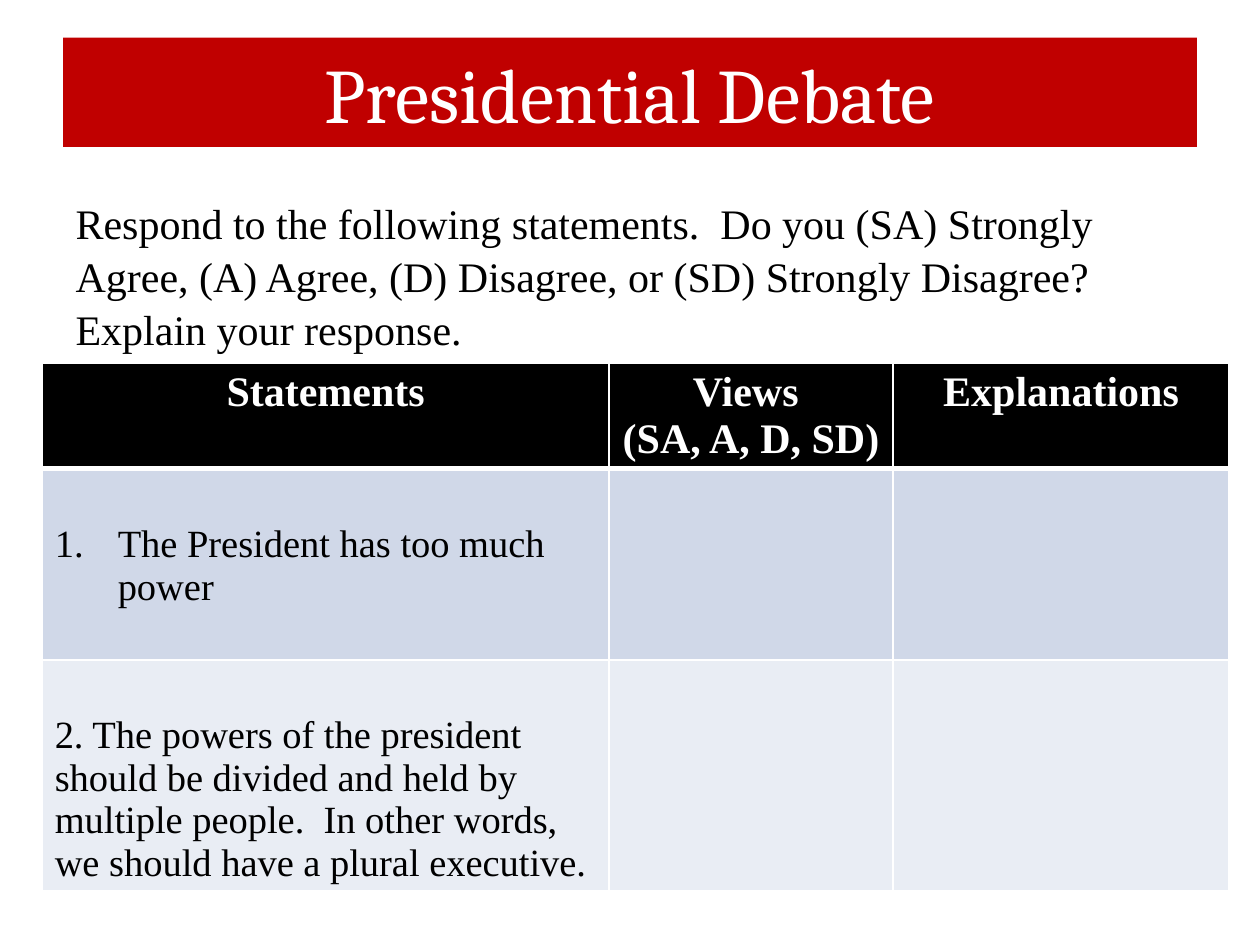
from dataclasses import dataclass

import lxml.etree
import pptx
import pptx.dml.color
import pptx.enum.text
import pptx.oxml.ns
import pptx.util

Cm = pptx.util.Cm
Pt = pptx.util.Pt
ALIGN = pptx.enum.text.PP_ALIGN
ANCHOR = pptx.enum.text.MSO_ANCHOR
WHITE = "FFFFFF"
BLACK = "000000"
SERIF = "Times New Roman"


@dataclass
class TextStyle:
    size: float
    color: str
    name: str = SERIF
    bold: bool = False
    align: int = ALIGN.LEFT


@dataclass
class TableRow:
    height: float
    fill: str
    texts: tuple
    style: TextStyle
    top_margin: float = 0.13
    top_line: float = 1
    bottom_line: float = 1
    numbered: bool = False


def rgb(value: str):
    return pptx.dml.color.RGBColor.from_string(value)


def add_child(parent, tag: str, **attributes: str):
    child = lxml.etree.SubElement(parent, pptx.oxml.ns.qn(tag))
    for key, value in attributes.items():
        child.set(key, value)
    return child


def paint(target, color: str) -> None:
    target.fill.solid()
    target.fill.fore_color.rgb = rgb(color)


def format_paragraph(para, style: TextStyle) -> None:
    para.alignment = style.align
    para.space_before = Pt(0)
    para.font.name = style.name
    para.font.size = Pt(style.size)
    para.font.bold = style.bold
    para.font.color.rgb = rgb(style.color)


def set_indent(para, left: float, bullet: str, **attributes: str) -> None:
    properties = para._p.get_or_add_pPr()
    properties.set("marL", str(Cm(left)))
    properties.set("indent", str(-Cm(left)))
    add_child(properties, bullet, **attributes)


def draw_borders(cell, row: TableRow) -> None:
    properties = cell._tc.get_or_add_tcPr()
    widths = {"a:lnL": 1, "a:lnR": 1, "a:lnT": row.top_line, "a:lnB": row.bottom_line}
    for tag, width in widths.items():
        line = add_child(properties, tag, w=str(Pt(width)))
        add_child(add_child(line, "a:solidFill"), "a:srgbClr", val=WHITE)


def fill_placeholder(holder, box: tuple, text: str, color: str, style: TextStyle):
    holder.left, holder.top, holder.width, holder.height = map(Cm, box)
    paint(holder, color)
    frame = holder.text_frame
    frame.auto_size = pptx.enum.text.MSO_AUTO_SIZE.NONE
    frame.text = text
    return frame.paragraphs[0]


def draw_table(page, left: float, top: float, widths: tuple, rows: list) -> None:
    height = sum(row.height for row in rows)
    table = page.shapes.add_table(
        len(rows), len(widths), Cm(left), Cm(top), Cm(sum(widths)), Cm(height)
    ).table
    for column, width in zip(table.columns, widths):
        column.width = Cm(width)
    for index, row in enumerate(rows):
        table.rows[index].height = Cm(row.height)
        for cell, text in zip(table.rows[index].cells, row.texts):
            draw_borders(cell, row)
            paint(cell, row.fill)
            cell.margin_top = Cm(row.top_margin)
            cell.text = text
            for para in cell.text_frame.paragraphs:
                if row.numbered and text:
                    set_indent(para, 1.27, "a:buFont", typeface="+mj-lt")
                    add_child(para._p.pPr, "a:buAutoNum", type="arabicPeriod")
                format_paragraph(para, row.style)


def main() -> None:
    deck = pptx.Presentation()
    deck.slide_width, deck.slide_height = Cm(25.4), Cm(19.05)
    page = deck.slides.add_slide(deck.slide_layouts[1])

    title_style = TextStyle(44, WHITE, "Cambria", align=ALIGN.CENTER)
    title = fill_placeholder(
        page.shapes.title, (1.27, 0.76, 22.86, 2.2), "Presidential Debate", "C00000", title_style
    )
    page.shapes.title.text_frame.vertical_anchor = ANCHOR.MIDDLE
    format_paragraph(title, title_style)

    prompt_style = TextStyle(24, BLACK)
    prompt = fill_placeholder(
        page.placeholders[1],
        (1.27, 3.81, 22.86, 13.21),
        "Respond to the following statements.  Do you (SA) Strongly Agree, (A) Agree, "
        "(D) Disagree, or (SD) Strongly Disagree?  Explain your response.",
        WHITE,
        prompt_style,
    )
    set_indent(prompt, 0, "a:buNone")
    prompt.line_spacing = 1.05
    format_paragraph(prompt, prompt_style)

    header_style = TextStyle(24, WHITE, bold=True, align=ALIGN.CENTER)
    statement_style = TextStyle(22, BLACK)
    rows = [
        TableRow(
            2.1, BLACK, ("Statements", "Views \n(SA, A, D, SD)", "Explanations"),
            header_style, bottom_line=3,
        ),
        TableRow(
            3.85, "D0D8E8", ("The President has too much power", "", ""),
            statement_style, top_margin=1.1, top_line=3, numbered=True,
        ),
        TableRow(
            4.62, "E9EDF4",
            ("2. The powers of the president should be divided and held by multiple people.  "
             "In other words, we should have a plural executive.", "", ""),
            statement_style, top_margin=1.1,
        ),
    ]
    draw_table(page, 0.85, 7.32, (11.43, 5.72, 6.78), rows)
    deck.save("out.pptx")


if __name__ == "__main__":
    main()
